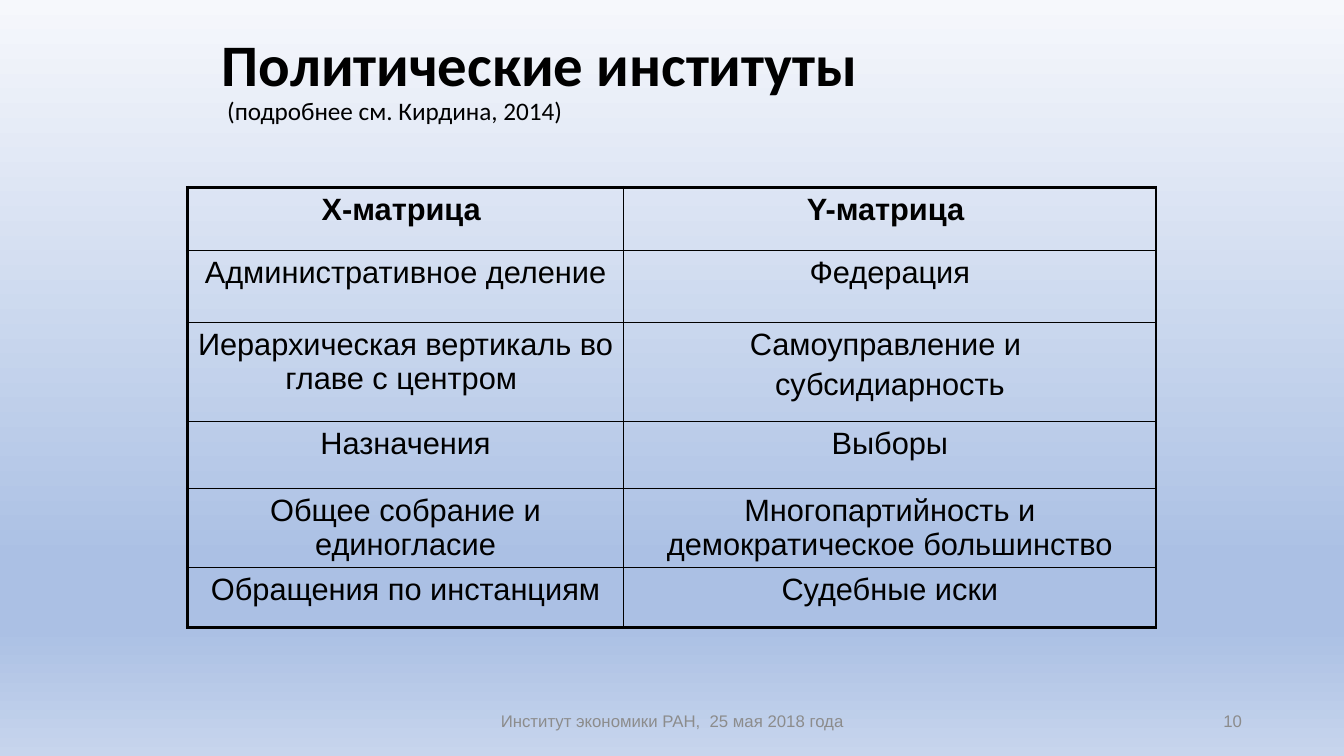
from dataclasses import dataclass

from lxml import etree
from pptx import Presentation
from pptx.dml.color import RGBColor
from pptx.enum.text import MSO_ANCHOR, MSO_AUTO_SIZE, PP_ALIGN
from pptx.oxml import parse_xml
from pptx.oxml.ns import nsdecls, qn
from pptx.slide import Slide
from pptx.table import _Cell
from pptx.text.text import _Paragraph
from pptx.util import Cm, Pt

LEFT, MID, RIGHT = PP_ALIGN.LEFT, PP_ALIGN.CENTER, PP_ALIGN.RIGHT
CENTRE = MSO_ANCHOR.MIDDLE
FIXED = MSO_AUTO_SIZE.NONE

COLORS = {
    "ink": "000000",
    "gray": "8C8C8C",
    "top": "F6F8FC",
    "deep": "ABC0E4",
    "base": "C7D5ED",
}
STOPS = [(0, "top"), (74, "deep"), (83, "deep"), (100, "base")]
THICK, THIN = 2.25, 1
COLS = [11, 13.41]


@dataclass
class Row:
    high: float
    x: str
    y: str


@dataclass
class Note:
    text: str
    left: float
    width: float
    align: PP_ALIGN


ROWS = [
    Row(1.6, "Х-матрица ", "Y-матрица "),
    Row(1.8, "Административное деление", "Федерация"),
    Row(2.5, "Иерархическая вертикаль во главе с центром ",
        "Самоуправление и \nсубсидиарность"),
    Row(1.68, "Назначения", "Выборы"),
    Row(1.4, "Общее собрание и единогласие",
        "Многопартийность и демократическое большинство"),
    Row(1.52, "Обращения по инстанциям", "Судебные иски"),
]
NOTES = [
    Note("Институт экономики РАН,  25 мая 2018 года", 11.23, 11.43, MID),
    Note("10", 23.93, 7.62, RIGHT),
]


def style(para: _Paragraph, sizes: list[float], font: str, color: str,
          bold: bool = False) -> None:
    """Format the runs in turn; only the first one may be bold."""
    for i, (run, size) in enumerate(zip(para.runs, sizes)):
        run.font.size = Pt(size)
        run.font.name = font
        run.font.bold = bold and i == 0
        run.font.color.rgb = RGBColor.from_string(COLORS[color])


def paint_back(slide: Slide) -> None:
    fill = slide.background.fill
    fill.gradient()
    fill.gradient_angle = 270
    stops = slide.background._cSld.find(".//" + qn("a:gsLst"))
    stops.clear()
    for pos, name in STOPS:
        stop = etree.SubElement(stops, qn("a:gs"), pos=str(pos * 1000))
        etree.SubElement(stop, qn("a:srgbClr"), val=COLORS[name])


def add_title(slide: Slide) -> None:
    title = slide.shapes.title
    title.left, title.top = Cm(5.33), Cm(0.74)
    title.width, title.height = Cm(23.29), Cm(2.59)
    frame = title.text_frame
    frame.text = "Политические институты\v (подробнее см. Кирдина, 2014)"
    frame.auto_size = FIXED
    frame.vertical_anchor = CENTRE
    para = frame.paragraphs[0]
    para.alignment = LEFT
    para.line_spacing = 0.9
    style(para, [42, 18], "Calibri", "ink", bold=True)


def set_edges(cell: _Cell, widths: list[float]) -> None:
    """Draw the cell borders, given as left, right, top and bottom."""
    props = cell._tc.get_or_add_tcPr()
    for i, (side, width) in enumerate(zip("LRTB", widths)):
        props.insert(i, parse_xml(
            f'<a:ln{side} {nsdecls("a")} w="{Pt(width)}"><a:solidFill>'
            f'<a:srgbClr val="{COLORS["ink"]}"/></a:solidFill></a:ln{side}>'))


def add_grid(slide: Slide) -> None:
    table = slide.shapes.add_table(
        len(ROWS), len(COLS), Cm(4.72), Cm(4.72),
        Cm(sum(COLS)), Cm(sum(row.high for row in ROWS))).table
    table.first_row = table.horz_banding = False
    for col, width in zip(table.columns, COLS):
        col.width = Cm(width)
    for r, row in enumerate(ROWS):
        table.rows[r].height = Cm(row.high)
        for c, text in enumerate((row.x, row.y)):
            cell = table.cell(r, c)
            cell.text_frame.text = text
            cell.fill.background()
            outer = (c == 0, c == len(COLS) - 1, r == 0, r == len(ROWS) - 1)
            set_edges(cell, [THICK if edge else THIN for edge in outer])
            for para in cell.text_frame.paragraphs:
                para.alignment = MID
                para.space_before = Pt(4.4)
                style(para, [22], "Arial", "ink", bold=r == 0)


def add_note(slide: Slide, note: Note) -> None:
    box = slide.shapes.add_textbox(
        Cm(note.left), Cm(17.65), Cm(note.width), Cm(1.02))
    frame = box.text_frame
    frame.text = note.text
    frame.word_wrap = True
    frame.vertical_anchor = CENTRE
    para = frame.paragraphs[0]
    para.alignment = note.align
    style(para, [12], "Arial", "gray")


def main() -> None:
    deck = Presentation()
    deck.slide_width, deck.slide_height = Cm(33.87), Cm(19.05)
    slide = deck.slides.add_slide(deck.slide_layouts.get_by_name("Title Only"))
    paint_back(slide)
    add_title(slide)
    add_grid(slide)
    for note in NOTES:
        add_note(slide, note)
    deck.save("out.pptx")


if __name__ == "__main__":
    main()
